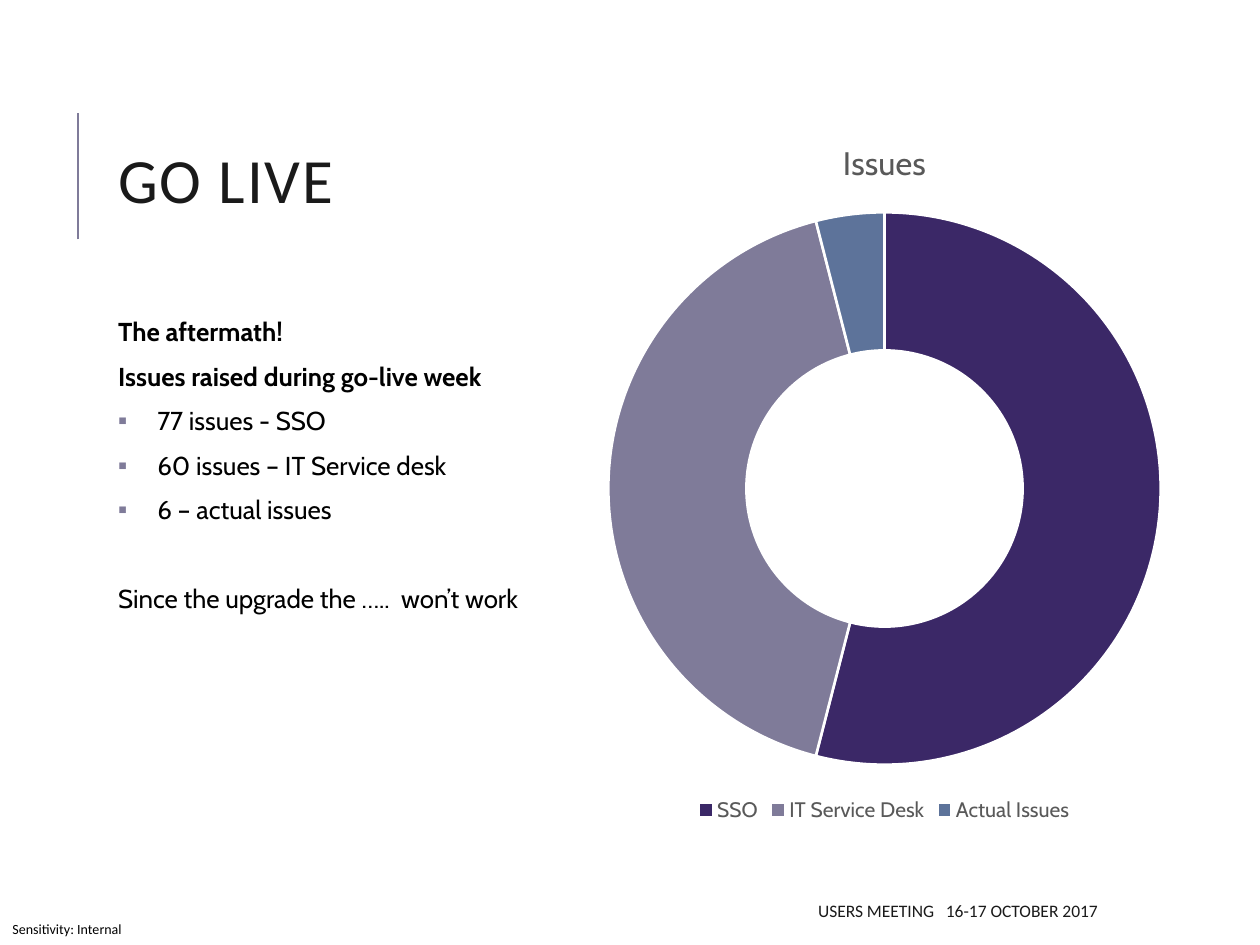
from lxml import etree
from pptx import Presentation
from pptx.chart.data import CategoryChartData
from pptx.dml.color import RGBColor
from pptx.enum.chart import XL_CHART_TYPE, XL_LEGEND_POSITION
from pptx.enum.shapes import MSO_CONNECTOR
from pptx.enum.text import MSO_ANCHOR, MSO_AUTO_SIZE, PP_ALIGN
from pptx.oxml.ns import qn
from pptx.util import Inches, Pt

COLORS = {"text": "000000", "heading": "1A1A1A", "chart_text": "595959", "white": "FFFFFF",
          "purple": "3B2867", "mauve": "7F7B99", "blue": "5D739A"}
ISSUES = [("SSO", 54, "purple"), ("IT Service Desk", 42, "mauve"), ("Actual Issues", 4, "blue")]
# text, bold, bulleted, space before in points
BODY = [
    ("The aftermath!", True, False, 6),
    ("Issues raised during go-live week", True, False, 6),
    ("77 issues - SSO", False, True, 6),
    ("60 issues – IT Service desk", False, True, 6),
    ("6 – actual issues", False, True, 6),
    ("Since the upgrade the …..  won’t work", False, False, 31.5),
]


def rgb(name):
    return RGBColor.from_string(COLORS[name])


def style_font(font, name, size, color, bold=False):
    for attr, value in {"name": name, "size": Pt(size), "bold": bold}.items():
        setattr(font, attr, value)
    font.color.rgb = rgb(color)


def add_textbox(s, box, anchor=MSO_ANCHOR.MIDDLE, wrap=True):
    tf = s.shapes.add_textbox(*map(Inches, box)).text_frame
    tf.word_wrap = wrap
    tf.vertical_anchor = anchor
    return tf


def add_line(p, text, *font):
    r = p.add_run()
    r.text = text
    style_font(r.font, *font)
    return r


def add_bullet(p):
    pPr = p._p.get_or_add_pPr()
    pPr.set("marL", str(Inches(0.31)))
    pPr.set("indent", str(-Inches(0.31)))
    color = etree.SubElement(pPr, qn("a:buClr"))
    etree.SubElement(color, qn("a:srgbClr"), val=COLORS["mauve"])
    etree.SubElement(pPr, qn("a:buFont"), typeface="Calibri")
    etree.SubElement(pPr, qn("a:buChar"), char="▪")


def add_title(s, box):
    left, top, _, height = box
    x, middle = left - 0.22, top + height / 2 - 0.07
    rule = s.shapes.add_connector(MSO_CONNECTOR.STRAIGHT, Inches(x), Inches(middle + 0.5),
                                  Inches(x), Inches(middle - 0.5))
    rule.line.color.rgb = rgb("mauve")
    rule.line.width = Pt(1.5)
    etree.SubElement(rule._element.spPr, qn("a:effectLst"))
    p = add_textbox(s, box).paragraphs[0]
    p.line_spacing = 0.8
    r = add_line(p, "GO LIVE", "Calibri", 36, "heading")
    r._r.get_or_add_rPr().set("spc", "100")


def add_body(s, box):
    tf = add_textbox(s, box, MSO_ANCHOR.TOP)
    for i, (text, bold, bulleted, before) in enumerate(BODY):
        p = tf.add_paragraph() if i else tf.paragraphs[0]
        p.line_spacing = 0.98
        p.space_before, p.space_after = Pt(before), Pt(2)
        if bulleted:
            add_bullet(p)
        add_line(p, text, "Cabin", 14.8, "text", bold)


def add_issues_chart(s, box):
    data = CategoryChartData()
    data.categories = [name for name, _, _ in ISSUES]
    data.add_series("Issues", [value for _, value, _ in ISSUES])
    chart = s.shapes.add_chart(XL_CHART_TYPE.DOUGHNUT, *map(Inches, box), data).chart
    style_font(chart.font, "Cabin", 10, "text")

    chart.has_title = True
    add_line(chart.chart_title.text_frame.paragraphs[0], "Issues", "Cabin", 18.6, "chart_text")
    chart.chart_title.include_in_layout = False
    chart.has_legend = True
    chart.legend.position = XL_LEGEND_POSITION.BOTTOM
    chart.legend.include_in_layout = False
    style_font(chart.legend.font, "Cabin", 12, "chart_text")

    plot = chart.plots[0]
    plot.vary_by_categories = True
    plot._element.find(qn("c:holeSize")).set("val", "75")
    for i, (_, _, color) in enumerate(ISSUES):
        fmt = plot.series[0].points[i].format
        fmt.fill.solid()
        fmt.fill.fore_color.rgb = rgb(color)
        fmt.line.color.rgb = rgb("white")
        fmt.line.width = Pt(1.5)


def add_footer(s, box):
    p = add_textbox(s, box).paragraphs[0]
    p.alignment = PP_ALIGN.RIGHT
    add_line(p, "USERS MEETING   16-17 OCTOBER 2017", "Calibri", 10, "heading")


def add_sensitivity_label(s, box):
    tf = add_textbox(s, box, wrap=False)
    tf.auto_size = MSO_AUTO_SIZE.SHAPE_TO_FIT_TEXT
    tf.margin_top = tf.margin_bottom = 0
    add_line(tf.paragraphs[0], "Sensitivity: Internal", "Calibri", 8, "text")


def main():
    prs = Presentation()
    prs.slide_width, prs.slide_height = Inches(10), Inches(7.5)
    s = prs.slides.add_slide(prs.slide_layouts[6])
    add_sensitivity_label(s, (0, 7.25, 1.14, 0.25))
    add_title(s, (0.84, 0.52, 3.6, 1.9))
    add_issues_chart(s, (4.69, 0.9, 4.66, 5.67))
    add_body(s, (0.84, 2.47, 3.6, 2.54))
    add_footer(s, (3.97, 7.08, 4.84, 0.3))
    prs.save("out.pptx")


if __name__ == "__main__":
    main()
